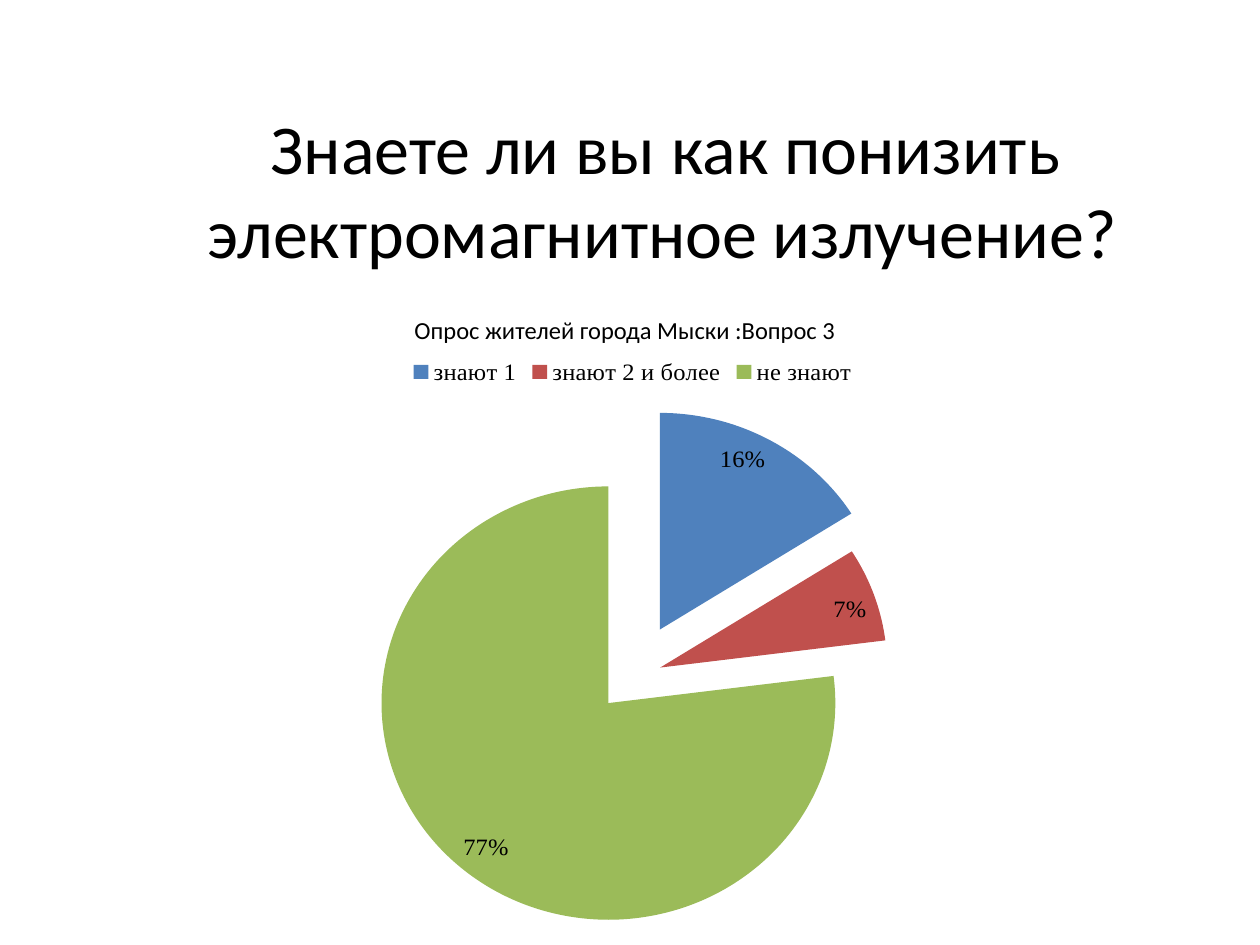
"""Build the survey slide with its exploded pie chart."""
from lxml import etree
from pptx import Presentation
from pptx.chart.data import CategoryChartData
from pptx.dml.color import RGBColor
from pptx.enum.chart import XL_CHART_TYPE as ChartType
from pptx.enum.chart import XL_LABEL_POSITION as LabelPosition
from pptx.enum.chart import XL_LEGEND_POSITION as LegendPosition
from pptx.enum.text import MSO_ANCHOR as Anchor
from pptx.enum.text import PP_ALIGN as Align
from pptx.oxml.ns import qn
from pptx.util import Inches, Pt

COLORS = {"text": "000000", "one": "4F81BD", "several": "C0504D", "none": "9BBB59"}
ANSWERS = [
    ("знают 1", 16, "one", 25),
    ("знают 2 и более", 7, "several", 13),
    ("не знают", 77, "none", 16),
]
TEXTS = [
    ("Знаете ли вы как понизить электромагнитное излучение?",
     (1.17, 0.78, 8.83, 1.33), 40, Anchor.TOP, Align.LEFT, (0.38, 0.5)),
    ("Опрос жителей города Мыски :Вопрос 3",
     (0.39, 2.03, 9.14, 1.17), 14, Anchor.MIDDLE, Align.CENTER, (0, 0)),
]


def style_font(font, size, name):
    for key, value in {"size": Pt(size), "name": name}.items():
        setattr(font, key, value)
    font.color.rgb = RGBColor.from_string(COLORS["text"])


deck = Presentation()
deck.slide_width, deck.slide_height = Inches(10), Inches(7.5)
page = deck.slides.add_slide(deck.slide_layouts[6])

data = CategoryChartData()
data.categories = [answer[0] for answer in ANSWERS]
data.add_series("Series 1", [answer[1] for answer in ANSWERS])
place = [Inches(length) for length in (0.02, 2.74, 10, 4.56)]
chart = page.shapes.add_chart(ChartType.PIE, *place, data).chart
style_font(chart.font, 10, "Calibri")
chart.has_title = False
chart.has_legend = True
chart.legend.position = LegendPosition.TOP
chart.legend.include_in_layout = False
style_font(chart.legend.font, 14, "Times New Roman")

plot = chart.plots[0]
plot.vary_by_categories = True
plot.has_data_labels = True
labels = plot.data_labels
label_format = {
    "show_percentage": True,
    "show_value": False,
    "number_format": "0%",
    "number_format_is_linked": False,
    "position": LabelPosition.INSIDE_END,
}
for key, value in label_format.items():
    setattr(labels, key, value)
style_font(labels.font, 14, "Times New Roman")

for index, (name, value, color, explosion) in enumerate(ANSWERS):
    point = plot.series[0].points[index]
    point.format.fill.solid()
    point.format.fill.fore_color.rgb = RGBColor.from_string(COLORS[color])
    point_xml = plot.series[0]._element.findall(qn("c:dPt"))[index]
    offset = etree.Element(qn("c:explosion"), val=str(explosion))
    point_xml.find(qn("c:spPr")).addprevious(offset)

plot_area = chart._chartSpace.find(".//" + qn("c:plotArea"))
for old in plot_area.findall(qn("c:layout")):
    plot_area.remove(old)
layout = etree.Element(qn("c:layout"))
manual = etree.SubElement(layout, qn("c:manualLayout"))
layout_values = {
    "layoutTarget": "inner", "xMode": "edge", "yMode": "edge",
    "x": "0", "y": "0.21", "w": "1", "h": "0.79",
}
for tag, value in layout_values.items():
    etree.SubElement(manual, qn("c:" + tag), val=value)
plot_area.insert(0, layout)

for text, bounds, size, anchor, align, (margin, indent) in TEXTS:
    box = page.shapes.add_textbox(*[Inches(length) for length in bounds])
    box.text_frame.word_wrap = True
    box.text_frame.vertical_anchor = anchor
    para = box.text_frame.paragraphs[0]
    para.alignment = align
    para_xml = para._p.get_or_add_pPr()
    para_xml.set("marL", str(Inches(margin)))
    para_xml.set("indent", str(Inches(indent)))
    span = para.add_run()
    span.text = text
    style_font(span.font, size, "Calibri")

deck.save("out.pptx")
